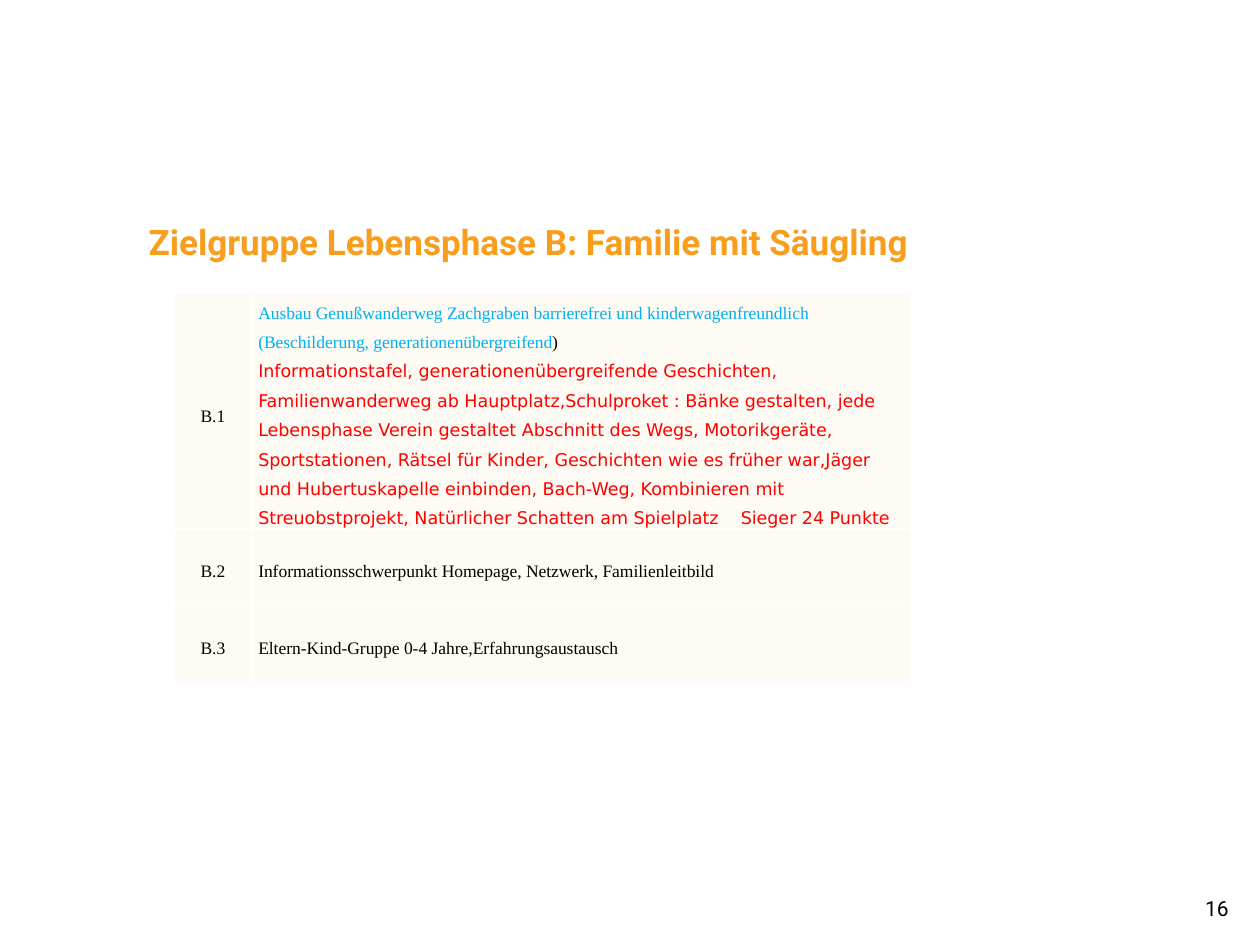
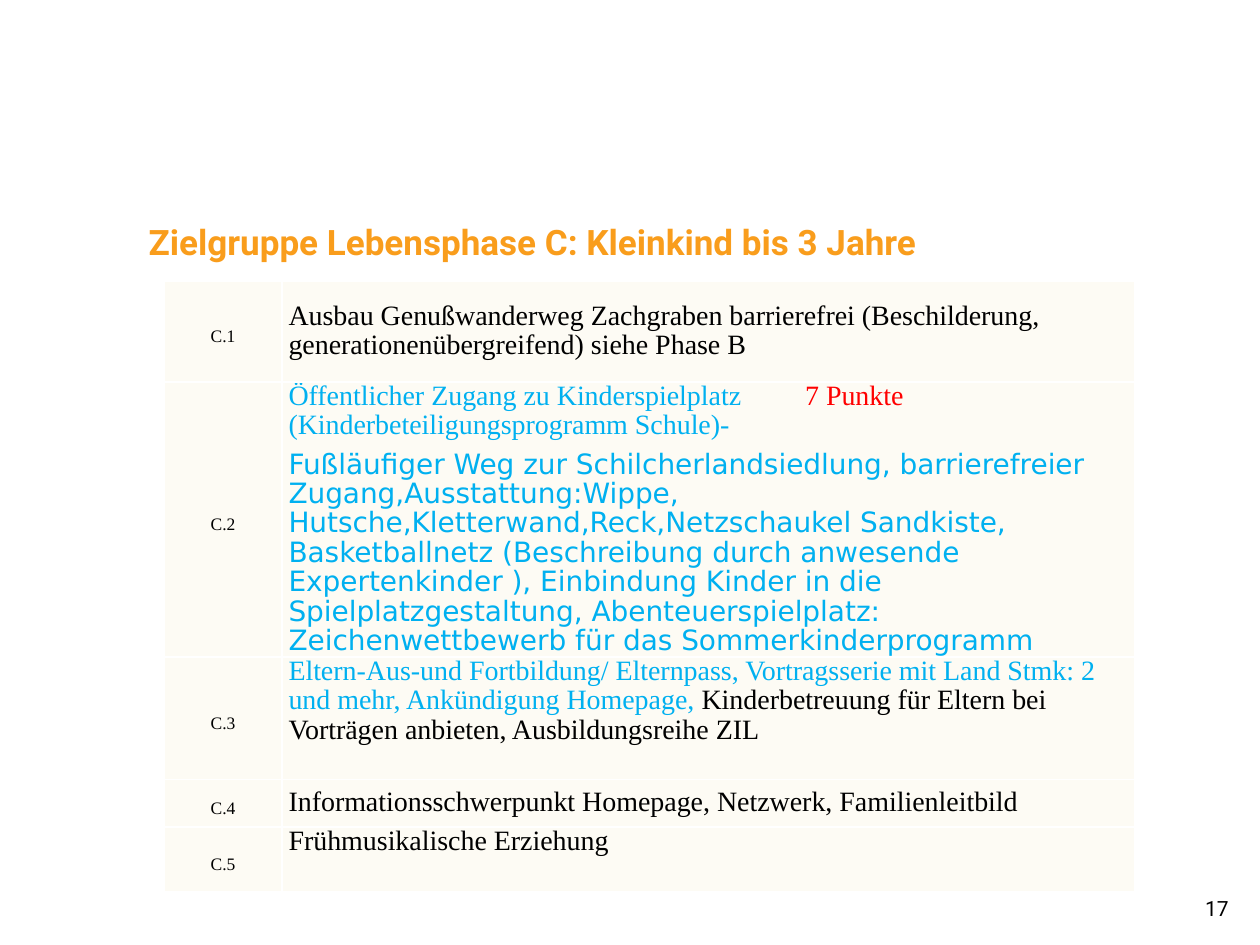
from lxml.etree import SubElement
from pptx import Presentation
from pptx.dml.color import RGBColor
from pptx.enum.text import MSO_ANCHOR, MSO_AUTO_SIZE, PP_ALIGN
from pptx.oxml.ns import qn
from pptx.util import Inches, Pt

ORANGE, CREAM, WHITE = "F99D1C", "FDFBF4", "FFFFFF"
BLACK, BLUE, RED = "000000", "00B0F0", "FF0000"
HEADING_FONT, SERIF, SANS = "Roboto", "Times New Roman", "DejaVu Sans"
TITLE_ONLY = 5
LINE_PITCH = Pt(16.8)
LABEL_SIZE = 10

# A cell text is a list of paragraphs, each a list of (text, colour, font).
INFORMATION = [[("Informationsschwerpunkt Homepage, Netzwerk, Familienleitbild", BLACK, SERIF)]]

# Each row: label, height, vertical anchor of the text, paragraphs.
INFANT_ROWS = [
    ("B.1", 1.87, MSO_ANCHOR.MIDDLE, [[
        ("Ausbau Genußwanderweg Zachgraben barrierefrei und kinderwagenfreundlich "
         "(Beschilderung, generationenübergreifend", BLUE, SERIF),
        (")\n", BLACK, SERIF),
        ("Informationstafel, generationenübergreifende Geschichten, Familienwanderweg ab "
         "Hauptplatz,Schulproket : Bänke gestalten, jede Lebensphase Verein gestaltet "
         "Abschnitt des Wegs, Motorikgeräte, Sportstationen, Rätsel für Kinder, "
         "Geschichten wie es früher war,Jäger und Hubertuskapelle einbinden, Bach-Weg, "
         "Kombinieren mit Streuobstprojekt, Natürlicher Schatten am Spielplatz"
         "\tSieger 24 Punkte", RED, SANS)]]),
    ("B.2", 0.6, MSO_ANCHOR.MIDDLE, INFORMATION),
    ("B.3", 0.61, MSO_ANCHOR.MIDDLE,
     [[("Eltern-Kind-Gruppe 0-4 Jahre,Erfahrungsaustausch", BLACK, SERIF)]]),
]

TODDLER_ROWS = [
    ("C.1", 0.8, MSO_ANCHOR.MIDDLE, [[
        ("Ausbau Genußwanderweg Zachgraben barrierefrei (Beschilderung, "
         "generationenübergreifend) siehe Phase B", BLACK, SERIF)]]),
    ("C.2", 2.18, MSO_ANCHOR.MIDDLE, [
        [("Öffentlicher Zugang zu Kinderspielplatz\t", BLUE, SERIF),
         ("7 Punkte ", RED, SERIF),
         ("(Kinderbeteiligungsprogramm Schule)-", BLUE, SERIF)],
        [("Fußläufiger Weg zur Schilcherlandsiedlung, barrierefreier Zugang,"
          "Ausstattung:Wippe, Hutsche,Kletterwand,Reck,Netzschaukel Sandkiste, "
          "Basketballnetz (Beschreibung durch anwesende Expertenkinder ), Einbindung "
          "Kinder in die Spielplatzgestaltung, Abenteuerspielplatz: Zeichenwettbewerb "
          "für das Sommerkinderprogramm", BLUE, SANS)]]),
    ("C.3", 0.97, MSO_ANCHOR.TOP, [[
        ("Eltern-Aus-und Fortbildung/ Elternpass, Vortragsserie mit Land Stmk: 2 und "
         "mehr, Ankündigung Homepage, ", BLUE, SERIF),
        ("Kinderbetreuung für Eltern bei Vorträgen anbieten, Ausbildungsreihe ZIL",
         BLACK, SERIF)]]),
    ("C.4", 0.38, MSO_ANCHOR.MIDDLE, INFORMATION),
    ("C.5", 0.51, MSO_ANCHOR.TOP, [[("Frühmusikalische Erziehung", BLACK, SERIF)]]),
]


def color(hex_string):
    return RGBColor.from_string(hex_string)


def set_font(font, name, hex_color, size=None, bold=None):
    font.name = name
    font.color.rgb = color(hex_color)
    if size:
        font.size = Pt(size)
    if bold is not None:
        font.bold = bold


def add_tab_stop(paragraph, position):
    tabs = SubElement(paragraph._p.get_or_add_pPr(), qn("a:tabLst"))
    SubElement(tabs, qn("a:tab"), pos=str(Inches(position)), algn="l")


def add_borders(cell):
    """Draw a thin white line on all four sides, before the cell's fill."""
    properties = cell._tc.get_or_add_tcPr()
    for side in ("lnL", "lnR", "lnT", "lnB"):
        line = SubElement(properties, qn(f"a:{side}"), w=str(Pt(1)))
        fill = SubElement(line, qn("a:solidFill"))
        SubElement(fill, qn("a:srgbClr"), val=WHITE)


def fill_cell(cell, paragraphs, size, anchor, alignment=PP_ALIGN.LEFT, tab=None):
    cell.margin_left = cell.margin_right = Inches(0.05)
    cell.margin_top = cell.margin_bottom = 0
    cell.vertical_anchor = anchor
    add_borders(cell)
    cell.fill.solid()
    cell.fill.fore_color.rgb = color(CREAM)
    frame = cell.text_frame
    for index, runs in enumerate(paragraphs):
        paragraph = frame.add_paragraph() if index else frame.paragraphs[0]
        paragraph.alignment = alignment
        paragraph.line_spacing = LINE_PITCH
        paragraph.space_after = Pt(3)
        if index:
            paragraph.space_before = Pt(3)
        if any("\t" in text for text, _, _ in runs):
            add_tab_stop(paragraph, tab)
        paragraph.font.size = Pt(size)
        for text, hex_color, font_name in runs:
            run = paragraph.add_run()
            run.text = text.rstrip("\n")
            set_font(run.font, font_name, hex_color, size)
            if text.endswith("\n"):
                paragraph.add_line_break()


def add_measures_table(slide, left, top, widths, rows, size, tab):
    height = sum(row[1] for row in rows)
    table = slide.shapes.add_table(len(rows), 2, Inches(left), Inches(top),
                                   Inches(sum(widths)), Inches(height)).table
    table.first_row = table.horz_banding = False
    for column, width in zip(table.columns, widths):
        column.width = Inches(width)
    for index, (label, row_height, anchor, paragraphs) in enumerate(rows):
        table.rows[index].height = Inches(row_height)
        fill_cell(table.cell(index, 0), [[(label, BLACK, SERIF)]], LABEL_SIZE,
                  MSO_ANCHOR.MIDDLE, PP_ALIGN.CENTER)
        fill_cell(table.cell(index, 1), paragraphs, size, anchor, tab=tab)


def add_page_number(slide, number):
    box = slide.shapes.add_textbox(Inches(9.02), Inches(7.06), Inches(0.83), Inches(0.3))
    box.text_frame.word_wrap = True
    paragraph = box.text_frame.paragraphs[0]
    paragraph.text = str(number)
    paragraph.alignment = PP_ALIGN.RIGHT
    set_font(paragraph.font, HEADING_FONT, BLACK, 12)


def add_phase_slide(presentation, heading, number):
    slide = presentation.slides.add_slide(presentation.slide_layouts[TITLE_ONLY])
    title = slide.shapes.title
    title.left, title.top = Inches(1.08), Inches(1.58)
    title.width, title.height = Inches(6.58), Inches(0.67)
    frame = title.text_frame
    frame.text = heading
    frame.auto_size = MSO_AUTO_SIZE.NONE
    frame.vertical_anchor = MSO_ANCHOR.MIDDLE
    paragraph = frame.paragraphs[0]
    paragraph.alignment = PP_ALIGN.LEFT
    set_font(paragraph.font, HEADING_FONT, ORANGE, 20, True)
    add_page_number(slide, number)
    return slide


def main():
    presentation = Presentation()
    presentation.slide_width, presentation.slide_height = Inches(10), Inches(7.5)

    slide = add_phase_slide(presentation, "Zielgruppe Lebensphase B: Familie mit Säugling", 16)
    add_measures_table(slide, 1.38, 2.33, (0.62, 5.23), INFANT_ROWS, size=10, tab=3.83)

    slide = add_phase_slide(presentation, "Zielgruppe Lebensphase C: Kleinkind bis 3 Jahre", 17)
    add_measures_table(slide, 1.3, 2.23, (0.94, 6.77), TODDLER_ROWS, size=16, tab=4.1)

    presentation.save("out.pptx")


if __name__ == "__main__":
    main()
